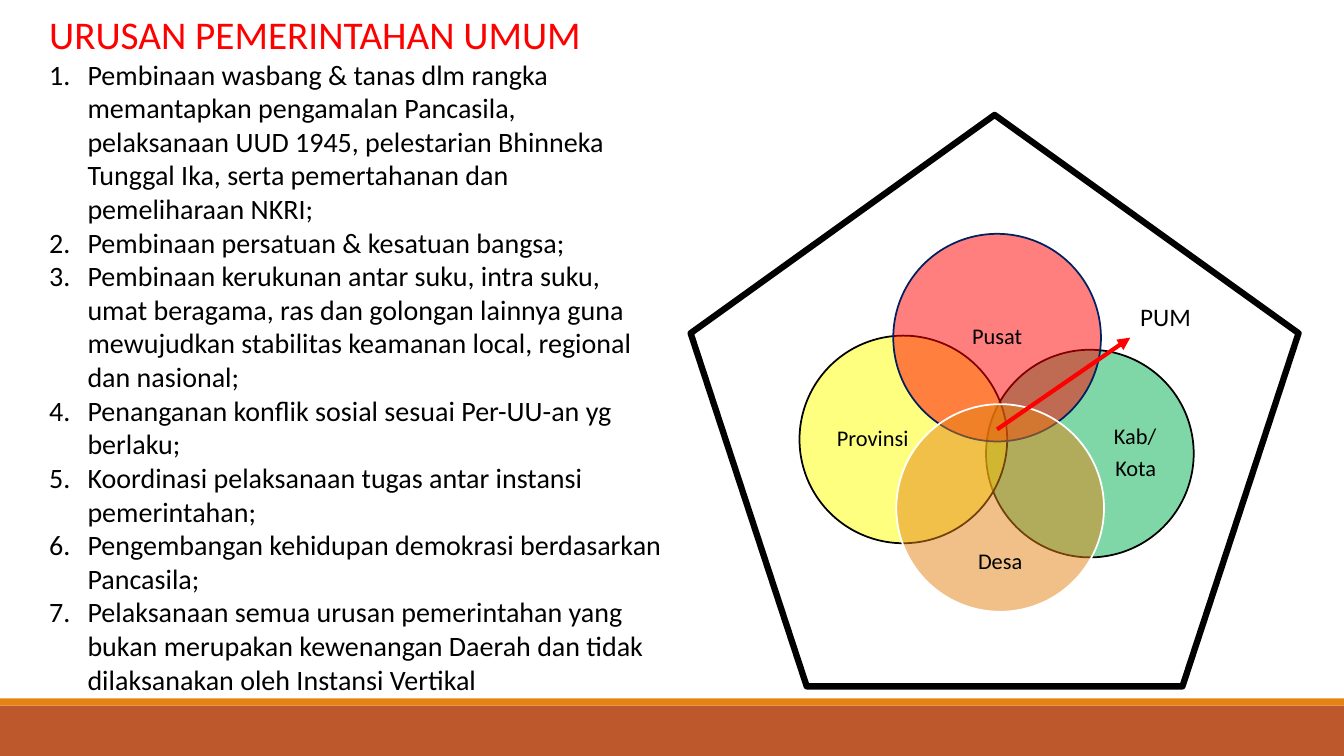
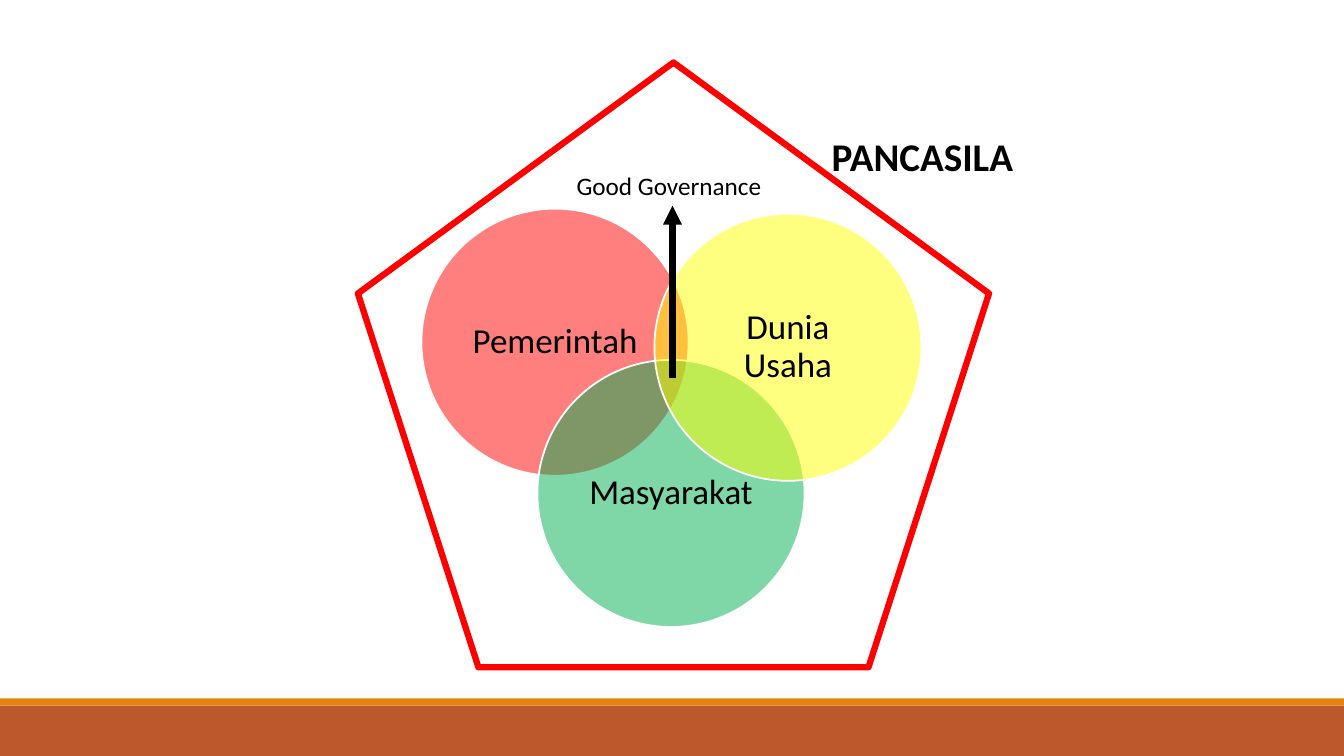
"""Build two slides on general government affairs and Pancasila governance."""
from lxml import etree
from pptx import Presentation
from pptx.dml.color import RGBColor
from pptx.enum.shapes import MSO_CONNECTOR, MSO_SHAPE
from pptx.enum.text import MSO_ANCHOR, PP_ALIGN
from pptx.oxml.ns import qn
from pptx.util import Emu, Pt

LEFT, CENTER, RIGHT = PP_ALIGN.LEFT, PP_ALIGN.CENTER, PP_ALIGN.RIGHT
TOP, MIDDLE, BOTTOM = MSO_ANCHOR.TOP, MSO_ANCHOR.MIDDLE, MSO_ANCHOR.BOTTOM
RECTANGLE, OVAL = MSO_SHAPE.RECTANGLE, MSO_SHAPE.OVAL
PENTAGON, STRAIGHT = MSO_SHAPE.REGULAR_PENTAGON, MSO_CONNECTOR.STRAIGHT

EMU_PER_PX = 9144
SLIDE_SIZE = (1333, 750)
FONT = "Calibri"
NUMBER_INDENT = 38
COLORS = {
    "black": "000000", "white": "FFFFFF", "red": "FF0000", "yellow": "FFFF00",
    "green": "00B050", "navy": "002060", "orange": "E48312", "rust": "BD582C",
}
BANDS = [((0, 700, 1333, 50), "rust"), ((0, 693, 1333, 7), "orange")]

AFFAIRS_TITLE = "URUSAN PEMERINTAHAN UMUM"
AFFAIRS = [
    "Pembinaan wasbang & tanas dlm rangka memantapkan pengamalan Pancasila, "
    "pelaksanaan UUD 1945, pelestarian Bhinneka Tunggal Ika, serta pemertahanan "
    "dan pemeliharaan NKRI;",
    "Pembinaan persatuan & kesatuan bangsa;",
    "Pembinaan kerukunan antar suku, intra suku, umat beragama, ras dan golongan "
    "lainnya guna mewujudkan stabilitas keamanan local, regional dan nasional;",
    "Penanganan konflik sosial sesuai Per-UU-an yg berlaku;",
    "Koordinasi pelaksanaan tugas antar instansi pemerintahan;",
    "Pengembangan kehidupan demokrasi berdasarkan Pancasila;",
    "Pelaksanaan semua urusan pemerintahan yang bukan merupakan kewenangan Daerah "
    "dan tidak dilaksanakan oleh Instansi Vertikal",
]
AFFAIRS_BOX = (39, 5, 627, 691)

DIAGRAMS = [
    {
        "diameter": 206, "size": 16, "inset": 7,
        "circles": [
            (["Kab/", "Kota"], (978, 347), "green", "black", RIGHT, MIDDLE),
            (["Provinsi"], (793, 333), "yellow", "black", LEFT, MIDDLE),
            (["Pusat"], (886, 232), "red", "navy", CENTER, MIDDLE),
            (["Desa"], (889, 401), "orange", "white", CENTER, BOTTOM),
        ],
        "pentagon": ((685, 114, 603, 567), "black"),
        "captions": [("PUM", (1121, 294, 71, 40), 18, False)],
        "arrow": ((989, 426, 1121, 335), "red", 3),
    },
    {
        "diameter": 265, "size": 25, "inset": 10,
        "circles": [
            (["Pemerintah"], (418, 207), "red", "white", CENTER, MIDDLE),
            (["Masyarakat"], (533, 357), "green", "white", CENTER, MIDDLE),
            (["Dunia Usaha"], (649, 212), "yellow", "white", CENTER, MIDDLE),
        ],
        "pentagon": ((355, 62, 626, 600), "red"),
        "captions": [
            ("Good Governance", (562, 164, 206, 40), 18, False),
            ("PANCASILA", (815, 126, 202, 57), 28, True),
        ],
        "arrow": ((667, 375, 667, 204), "black", 4.5),
    },
]


def px(*lengths):
    return [Emu(length * EMU_PER_PX) for length in lengths]


def rgb(name):
    return RGBColor.from_string(COLORS[name])


def apply(target, values):
    for name, value in values.items():
        setattr(target, name, value)


def set_line(line, color, width):
    line.color.rgb = rgb(color)
    line.width = Pt(width)


def add_figure(slide, preset, box, fill=None, opacity=100):
    figure = slide.shapes.add_shape(preset, *px(*box))
    figure.shadow.inherit = False
    figure.line.fill.background()
    if fill is None:
        figure.fill.background()
        return figure
    figure.fill.solid()
    figure.fill.fore_color.rgb = rgb(fill)
    if opacity < 100:
        tint = figure.fill._xPr.find(".//" + qn("a:srgbClr"))
        etree.SubElement(tint, qn("a:alpha"), val=str(opacity * 1000))
    return figure


def write(frame, lines, size, color="black", bold=False, **layout):
    for index, text in enumerate(lines):
        paragraph = frame.paragraphs[0] if index == 0 else frame.add_paragraph()
        apply(paragraph, layout)
        run = paragraph.add_run()
        run.text = text
        apply(run.font, {"name": FONT, "size": Pt(size), "bold": bold})
        run.font.color.rgb = rgb(color)


def add_text_box(slide, box, wrap):
    frame = slide.shapes.add_textbox(*px(*box)).text_frame
    apply(frame, {"word_wrap": wrap, "vertical_anchor": TOP})
    return frame


def number(paragraph):
    properties = paragraph._p.get_or_add_pPr()
    indent = NUMBER_INDENT * EMU_PER_PX
    properties.set("marL", str(indent))
    properties.set("indent", str(-indent))
    etree.SubElement(properties, qn("a:buAutoNum"), type="arabicPeriod")


def add_affairs(slide):
    frame = add_text_box(slide, AFFAIRS_BOX, True)
    write(frame, [AFFAIRS_TITLE], 28, "red")
    for affair in AFFAIRS:
        paragraph = frame.add_paragraph()
        run = paragraph.add_run()
        run.text = affair
        apply(run.font, {"name": FONT, "size": Pt(20)})
        run.font.color.rgb = rgb("black")
        number(paragraph)


def add_circle(slide, diagram, circle):
    labels, corner, fill, outline, alignment, anchor = circle
    diameter, size = diagram["diameter"], diagram["size"]
    disc = add_figure(slide, OVAL, (*corner, diameter, diameter), fill, 50)
    set_line(disc.line, outline, 1.25)
    inset = px(diagram["inset"])[0]
    apply(disc.text_frame, {
        "word_wrap": True, "vertical_anchor": anchor,
        "margin_left": inset, "margin_right": inset,
        "margin_top": inset, "margin_bottom": inset,
    })
    write(disc.text_frame, labels, size, alignment=alignment,
          line_spacing=0.9, space_after=Pt(size * 0.35))


def add_arrow(slide, ends, color, width):
    arrow = slide.shapes.add_connector(STRAIGHT, *px(*ends))
    set_line(arrow.line, color, width)
    etree.SubElement(arrow.line._get_or_add_ln(), qn("a:tailEnd"), type="triangle")
    etree.SubElement(arrow._element.spPr, qn("a:effectLst"))


def add_diagram(slide, diagram):
    for circle in diagram["circles"]:
        add_circle(slide, diagram, circle)
    box, outline = diagram["pentagon"]
    set_line(add_figure(slide, PENTAGON, box).line, outline, 4.5)
    for caption, place, size, bold in diagram["captions"]:
        write(add_text_box(slide, place, False), [caption], size, bold=bold)
    add_arrow(slide, *diagram["arrow"])


def main():
    deck = Presentation()
    deck.slide_width, deck.slide_height = px(*SLIDE_SIZE)
    for diagram in DIAGRAMS:
        slide = deck.slides.add_slide(deck.slide_layouts[6])
        for box, fill in BANDS:
            add_figure(slide, RECTANGLE, box, fill)
        add_diagram(slide, diagram)
    add_affairs(deck.slides[0])
    deck.save("out.pptx")


if __name__ == "__main__":
    main()
